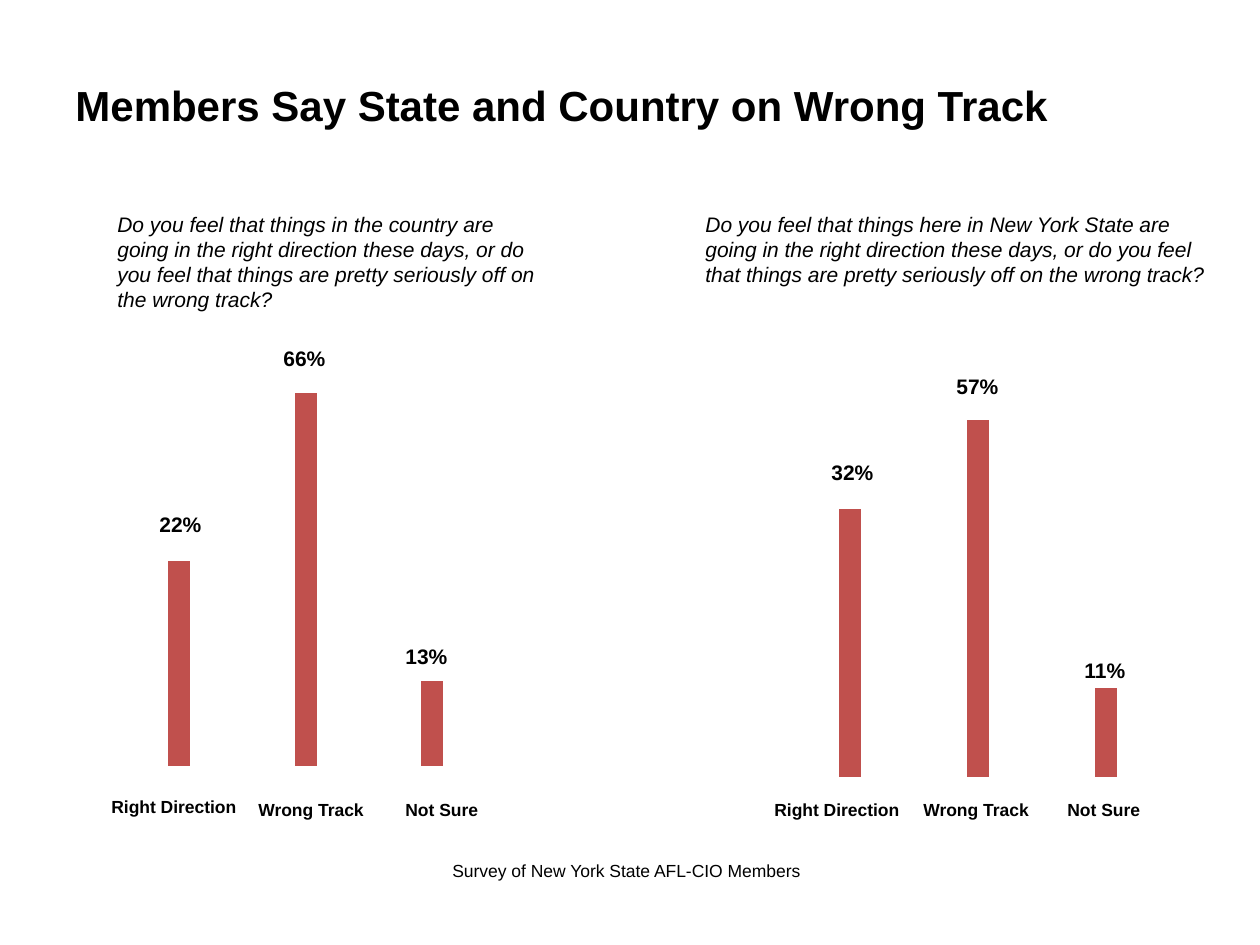
import pptx
import pptx.chart.data
import pptx.dml.color
import pptx.enum.chart
import pptx.enum.text
import pptx.oxml
import pptx.oxml.ns
import pptx.util

SCALE = 914400 / 126
HUES = {"ink": "000000", "blue": "4F81BD", "red": "C0504D", "green": "9BBB59"}


def px(num):
    return pptx.util.Emu(round(num * SCALE))


def hue(name):
    return pptx.dml.color.RGBColor.from_string(HUES[name])


def add_text(slide, box, lines, size, bold=False, slant=False, wrap=False):
    frame = slide.shapes.add_textbox(*map(px, box)).text_frame
    frame.word_wrap = wrap
    frame.auto_size = pptx.enum.text.MSO_AUTO_SIZE.SHAPE_TO_FIT_TEXT
    for num, line in enumerate(lines):
        para = frame.add_paragraph() if num else frame.paragraphs[0]
        run = para.add_run()
        run.text = line
        font = run.font
        font.name = "Arial"
        font.size = pptx.util.Pt(size)
        font.bold = bold
        font.italic = slant
        font.color.rgb = hue("ink")


def set_plot(chart, spots):
    area = chart._chartSpace.chart.plotArea
    for old in area.findall(pptx.oxml.ns.qn("c:layout")):
        area.remove(old)
    modes = '<c:xMode val="edge"/><c:yMode val="edge"/>'
    sides = "".join(f'<c:{key} val="{val}"/>' for key, val in zip("xywh", spots))
    area.insert(0, pptx.oxml.parse_xml(
        f'<c:layout {pptx.oxml.ns.nsdecls("c")}><c:manualLayout>'
        f'<c:layoutTarget val="inner"/>{modes}{sides}</c:manualLayout></c:layout>'))


def add_bars(slide, box, vals, top, spots):
    data = pptx.chart.data.CategoryChartData()
    data.categories = ["1", "2", "3", "4"]
    blank = [None] * 4
    for num, row in enumerate([blank, vals + [None], blank], 1):
        data.add_series(f"Series {num}", row)
    kind = pptx.enum.chart.XL_CHART_TYPE.COLUMN_CLUSTERED
    chart = slide.shapes.add_chart(kind, *map(px, box), data).chart
    chart.has_title = False
    chart.has_legend = False
    chart.font.name = "Calibri"
    chart.font.size = pptx.util.Pt(10)
    chart.font.color.rgb = hue("ink")
    for axis in (chart.category_axis, chart.value_axis):
        axis.has_major_gridlines = False
        axis.visible = False
    chart.value_axis.minimum_scale = 0
    chart.value_axis.maximum_scale = top
    plot = chart.plots[0]
    plot.gap_width = 219
    plot.overlap = -27
    plot.vary_by_categories = False
    for row, name in zip(plot.series, ("blue", "red", "green")):
        row.format.fill.solid()
        row.format.fill.fore_color.rgb = hue(name)
        row.invert_if_negative = False
    set_plot(chart, spots)


def add_tags(slide, tags, size, wide, high):
    for tag, left, top in tags:
        add_text(slide, (left, top, wide[tag], high), [tag], size, bold=True)


def main():
    deck = pptx.Presentation()
    deck.slide_width, deck.slide_height = px(1260), px(945)
    slide = deck.slides.add_slide(deck.slide_layouts[6])

    add_text(slide, (63, 73, 1092, 63),
             ["Members Say State and Country on Wrong Track"], 24, bold=True, wrap=True)
    add_text(slide, (105, 205, 451, 115),
             ["Do you feel that things in the country are going in the right "
              "direction these days, or do you feel that things are pretty "
              "seriously off on the wrong track?"], 12, slant=True, wrap=True)
    add_text(slide, (693, 205, 536, 89),
             ["Do you feel that things here in New York State are",
              "going in the right direction these days, or do you feel",
              "that things are pretty seriously off on the wrong track?"],
             12, slant=True, wrap=True)

    add_bars(slide, (84, 262, 546, 539), [55, 100, 23], 114, (0.058, 0.147, 0.928, 0.789))
    add_bars(slide, (714, 284, 746, 539), [75, 100, 25], 125, (0.096, 0.086, 0.688, 0.829))

    rates = [("22%", 147, 505), ("66%", 271, 339), ("13%", 393, 637),
             ("32%", 819, 453), ("57%", 944, 367), ("11%", 1072, 651)]
    add_tags(slide, rates, 12, {tag: 68 for tag, _, _ in rates}, 38)
    names = [("Right Direction", 99, 790), ("Wrong Track", 246, 793),
             ("Not Sure", 393, 793), ("Right Direction", 762, 793),
             ("Wrong Track", 911, 793), ("Not Sure", 1055, 793)]
    wide = {"Right Direction": 152, "Wrong Track": 134, "Not Sure": 105}
    add_tags(slide, names, 10, wide, 34)
    add_text(slide, (440, 854, 379, 34), ["Survey of New York State AFL-CIO Members"], 10)
    deck.save("out.pptx")


if __name__ == "__main__":
    main()
